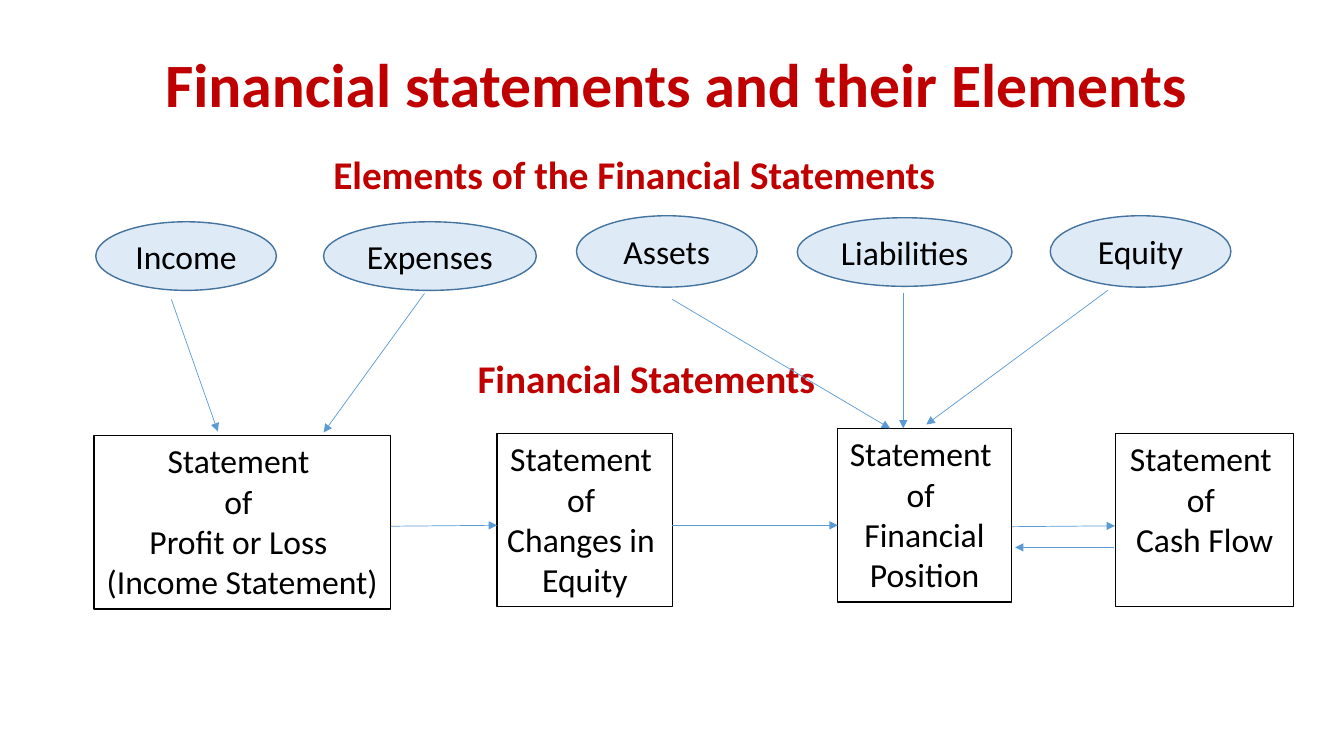
from lxml import etree
from pptx import Presentation
from pptx.dml.color import RGBColor
from pptx.enum import shapes, text
from pptx.oxml.ns import qn
from pptx.util import Pt

RED, BLACK, WHITE = "C00000", "000000", "FFFFFF"
PALE, BLUE, ARROW = "DEEBF7", "43739E", "5B9BD5"


def color(value):
    return RGBColor.from_string(value)


def write(sp, lines, size, ink, bold=False, align=text.PP_ALIGN.CENTER,
          anchor=text.MSO_ANCHOR.TOP, spacing=None):
    tf = sp.text_frame
    tf.word_wrap = True
    tf.vertical_anchor = anchor
    tf.text = "\n".join(lines)
    for p in tf.paragraphs:
        p.alignment = align
        p.line_spacing = spacing
        p.font.name = "Calibri"
        p.font.size = Pt(size)
        p.font.bold = bold
        p.font.color.rgb = color(ink)


def add_shape(s, kind, box, fill=None, line=None, width=1):
    sp = s.shapes.add_shape(kind, *map(Pt, box))
    sp.shadow.inherit = False
    if fill:
        sp.fill.solid()
        sp.fill.fore_color.rgb = color(fill)
    else:
        sp.fill.background()
    if line:
        sp.line.color.rgb = color(line)
        sp.line.width = Pt(width)
    else:
        sp.line.fill.background()
    return sp


def add_heading(s, box, words, size, fill=None, **layout):
    if fill:
        sp = add_shape(s, shapes.MSO_SHAPE.RECTANGLE, box, fill)
    else:
        sp = s.shapes.add_textbox(*map(Pt, box))
    write(sp, [words], size, RED, True, text.PP_ALIGN.LEFT, **layout)


def add_elements(s, box):
    left, top = box[:2]
    elements = [
        ("Income", 0, 4.3, 129, 49),
        ("Expenses", 162.7, 4.3, 152, 49),
        ("Assets", 343.4, 0, 129, 51),
        ("Liabilities", 501.1, 1.4, 153.4, 49),
        ("Equity", 681.8, 0, 129, 51),
    ]
    for name, x, y, w, h in elements:
        sp = add_shape(s, shapes.MSO_SHAPE.OVAL, (left + x, top + y, w, h), PALE, BLUE)
        write(sp, [name], 24, BLACK, anchor=text.MSO_ANCHOR.MIDDLE)


def add_statements(s, box):
    left, top, _, height = box
    statements = [
        (["Profit or Loss ", "(Income Statement)"], 0, 5, 212, 1),
        (["Changes in ", "Equity"], 288, 3.6, 125.5, 0.75),
        (["Financial Position"], 531.4, 0, 124, 1),
        (["Cash Flow"], 730.1, 3.6, 126.7, 0.75),
    ]
    for subject, x, y, w, line_width in statements:
        sp = add_shape(s, shapes.MSO_SHAPE.RECTANGLE, (left + x, top + y, w, height),
                       line=BLACK, width=line_width)
        write(sp, ["Statement ", "of "] + subject, 24, BLACK)


def add_arrows(s, box):
    left, top = box[:2]
    element_arrows = [
        (55.4, 6.5, 88.6, 100.8),
        (236.2, 2.2, 164.2, 101.5),
        (413.3, 6.5, 568.8, 98.6),
        (578.2, 2.2, 578.2, 98.6),
        (724.3, 0, 594.7, 95.8),
    ]
    statement_arrows = [
        (212, 168.5, 288, 167.8),
        (413.3, 167.8, 531.4, 167.8),
        (656, 168.8, 729.4, 168.2),
        (728.6, 183.6, 658.1, 183.6),
    ]
    for x1, y1, x2, y2 in element_arrows + statement_arrows:
        ends = left + x1, top + y1, left + x2, top + y2
        cx = s.shapes.add_connector(shapes.MSO_CONNECTOR.STRAIGHT, *map(Pt, ends))
        cx.line.color.rgb = color(ARROW)
        cx.line.width = Pt(0.5)
        etree.SubElement(cx.line._get_or_add_ln(), qn("a:tailEnd"), type="triangle")
        etree.SubElement(cx._element.spPr, qn("a:effectLst"))


def build_slide(prs):
    s = prs.slides.add_slide(prs.slide_layouts[6])
    add_elements(s, (68.4, 154.1, 811, 53.3))
    add_heading(s, (110.9, 26.6, 785.5, 72), "Financial statements and their Elements", 44,
                anchor=text.MSO_ANCHOR.MIDDLE, spacing=0.9)
    add_heading(s, (334, 249.8, 273, 41), "Financial Statements", 28, fill=WHITE)
    add_heading(s, (231, 103.7, 450, 41), "Elements of the Financial Statements", 28)
    add_statements(s, (67, 306, 857, 124))
    add_arrows(s, (67, 207.4, 857, 184))


def main():
    prs = Presentation()
    prs.slide_width, prs.slide_height = Pt(960), Pt(540)
    build_slide(prs)
    prs.save("out.pptx")


if __name__ == "__main__":
    main()
